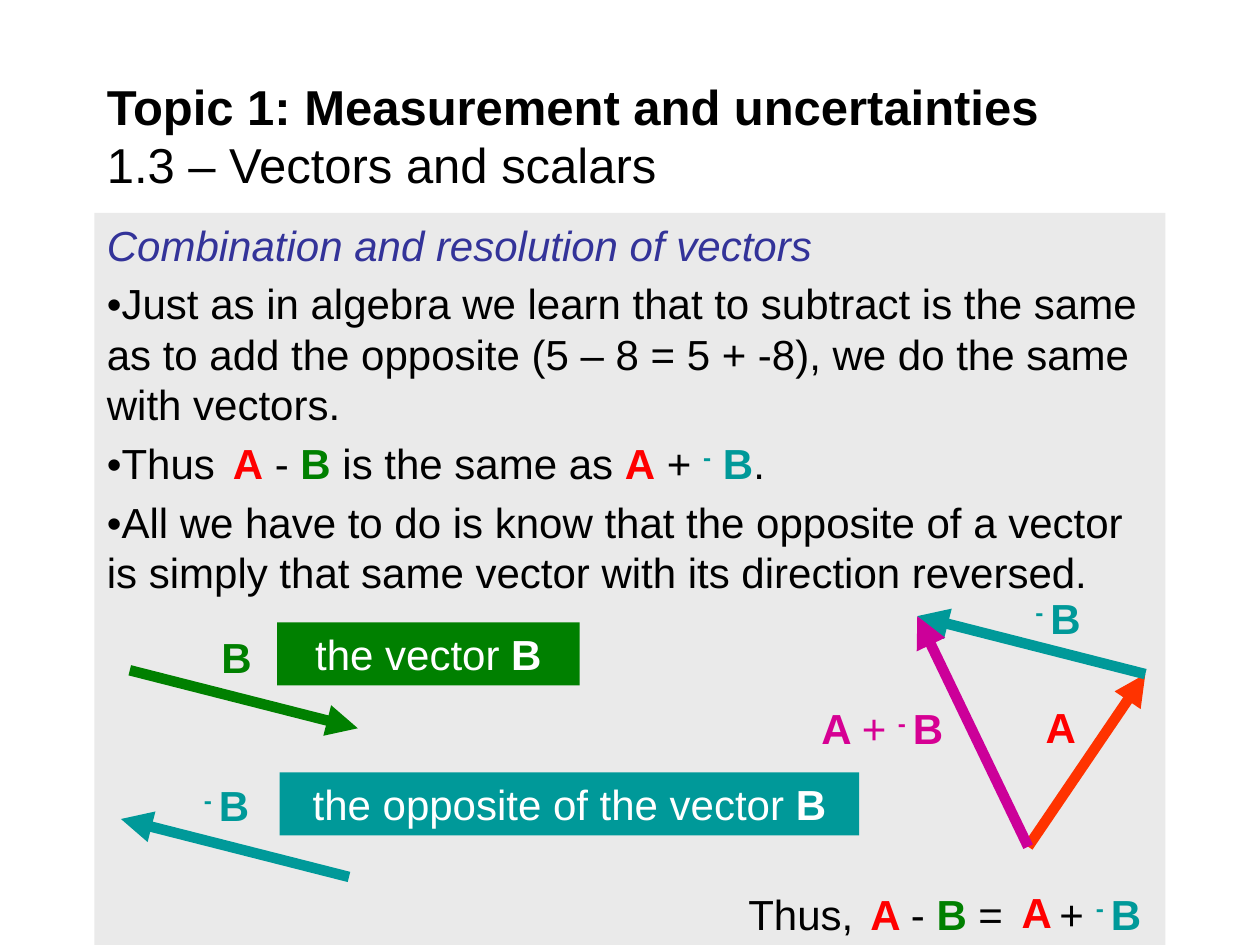
from lxml import etree
from pptx import Presentation
from pptx import util as u
from pptx.dml.color import RGBColor
from pptx.enum import shapes, text
from pptx.oxml.ns import qn

COLORS = {
    "black": "000000", "white": "FFFFFF", "panel": "EAEAEA",
    "heading": "333399", "a": "FF0000", "a_arrow": "FF3300",
    "b": "008000", "minus_b": "009999", "sum": "D60093", "sum_arrow": "CC0099",
}
FONT = "Arial"
LINE_BREAK = ("\n", {})


def rgb(name):
    return RGBColor.from_string(COLORS[name])


def add_text(paragraph, words, color="black", size=24, bold=False,
             italic=False, raised=False):
    if words == "\n":
        paragraph.add_line_break()
        return
    run = paragraph.add_run()
    run.text = words
    font = run.font
    font.name, font.size = FONT, u.Pt(size)
    font.bold, font.italic = bold, italic
    font.color.rgb = rgb(color)
    if raised:
        run._r.get_or_add_rPr().set("baseline", "30000")


class SlideBuilder:
    """Holds the slide and draws each kind of element in one style."""

    def __init__(self, slide, arrow_width=6, paragraph_gap=4.8):
        self.slide = slide
        self.arrow_width = u.Pt(arrow_width)
        self.paragraph_gap = u.Pt(paragraph_gap)

    def fill_frame(self, frame, paragraphs, align, anchor):
        frame.word_wrap = True
        frame.vertical_anchor = anchor
        for i, runs in enumerate(paragraphs):
            paragraph = frame.add_paragraph() if i else frame.paragraphs[0]
            paragraph.alignment = align
            if i:
                paragraph.space_before = self.paragraph_gap
            for words, style in runs:
                add_text(paragraph, words, **style)

    def label(self, left, top, width, *runs, height=0.5,
              anchor=text.MSO_ANCHOR.TOP):
        box = self.slide.shapes.add_textbox(*map(u.Inches, (left, top, width, height)))
        self.fill_frame(box.text_frame, [runs], text.PP_ALIGN.LEFT, anchor)

    def panel(self, left, top, width, height, fill, paragraphs,
              align=text.PP_ALIGN.LEFT):
        rect = self.slide.shapes.add_shape(
            shapes.MSO_SHAPE.RECTANGLE, *map(u.Inches, (left, top, width, height)))
        rect.shadow.inherit = False
        rect.fill.solid()
        rect.fill.fore_color.rgb = rgb(fill)
        rect.line.fill.background()
        self.fill_frame(rect.text_frame, paragraphs, align, text.MSO_ANCHOR.TOP)

    def arrow(self, start, tip, color):
        line = self.slide.shapes.add_connector(
            shapes.MSO_CONNECTOR.STRAIGHT, *map(u.Inches, (*start, *tip)))
        line.line.color.rgb = rgb(color)
        line.line.width = self.arrow_width
        etree.SubElement(line.line._get_or_add_ln(), qn("a:tailEnd"), type="triangle")
        etree.SubElement(line._element.spPr, qn("a:effectLst"))


def plain(words, color="black"):
    return words, {"color": color}


def bold(words, color, raised=False):
    return words, {"color": color, "bold": True, "raised": raised}


def main():
    deck = Presentation()
    deck.slide_width, deck.slide_height = u.Inches(10), u.Inches(7.5)
    builder = SlideBuilder(deck.slides.add_slide(deck.slide_layouts[6]))

    vector_a = bold("A", "a")
    minus_b = (bold("- ", "minus_b", raised=True), bold("B", "minus_b"))

    # Explanation
    builder.panel(0.75, 1.69, 8.5, 5.81, "panel", [
        [("Combination and resolution of vectors",
          {"color": "heading", "italic": True})],
        [plain("•Just as in algebra we learn that to subtract is the same as "
               "to add the opposite (5 – 8 = 5 + -8), we do the same with vectors.")],
        [plain("•Thus\t"), vector_a, plain(" - "), bold("B ", "b"),
         plain("is the same as "), vector_a, plain(" + "),
         bold("-", "minus_b", raised=True), bold(" B", "minus_b"), plain(".")],
        [plain("•All we have to do is know that the opposite of a vector is "
               "simply that same vector with its direction reversed.")],
    ])

    # Title
    builder.label(0.75, 0.58, 8.5,
                  ("Topic 1: Measurement and uncertainties",
                   {"size": 28, "bold": True}),
                  LINE_BREAK,
                  ("1.3 – Vectors and scalars", {"size": 28}),
                  height=0.98, anchor=text.MSO_ANCHOR.MIDDLE)

    # Vector B and its opposite
    run, drop = 1.81, 0.46
    builder.arrow((1.03, 5.32), (1.03 + run, 5.32 + drop), "b")
    builder.label(1.66, 4.96, 0.47, bold("B", "b"))
    builder.arrow((0.96 + run, 6.5 + drop), (0.96, 6.5), "minus_b")
    builder.label(1.52, 6.14, 0.66, *minus_b)
    for left, top, width, fill, words in (
            (2.2, 4.94, 2.4, "b", "the vector "),
            (2.22, 6.13, 4.6, "minus_b", "the opposite of the vector ")):
        builder.panel(left, top, width, 0.5, fill,
                      [[plain(words, "white"), bold("B", "white")]],
                      align=text.PP_ALIGN.CENTER)

    # Triangle of A, -B and their sum
    origin, tip_a = (8.16, 6.72), (9.09, 5.35)
    tip_sum = (tip_a[0] - run, tip_a[1] - drop)
    builder.arrow(origin, tip_a, "a_arrow")
    builder.label(8.2, 5.52, 0.47, vector_a)
    builder.arrow(tip_a, tip_sum, "minus_b")
    builder.label(8.12, 4.65, 0.66, *minus_b)
    builder.arrow(origin, tip_sum, "sum_arrow")
    builder.label(6.42, 5.53, 1.22, bold("A ", "sum"), plain("+ ", "sum"),
                  bold("- ", "sum", raised=True), bold("B", "sum"))

    # Conclusion
    builder.label(6.81, 7, 1.88, bold("A ", "a"), plain("- "),
                  bold("B", "b"), plain(" ="))
    builder.label(8.01, 6.99, 0.44, vector_a)
    builder.label(8.31, 7, 0.46, plain("+"))
    builder.label(8.6, 7, 0.86, *minus_b)
    builder.label(5.84, 7, 1.88, plain("Thus,"))

    deck.save("out.pptx")


if __name__ == "__main__":
    main()
